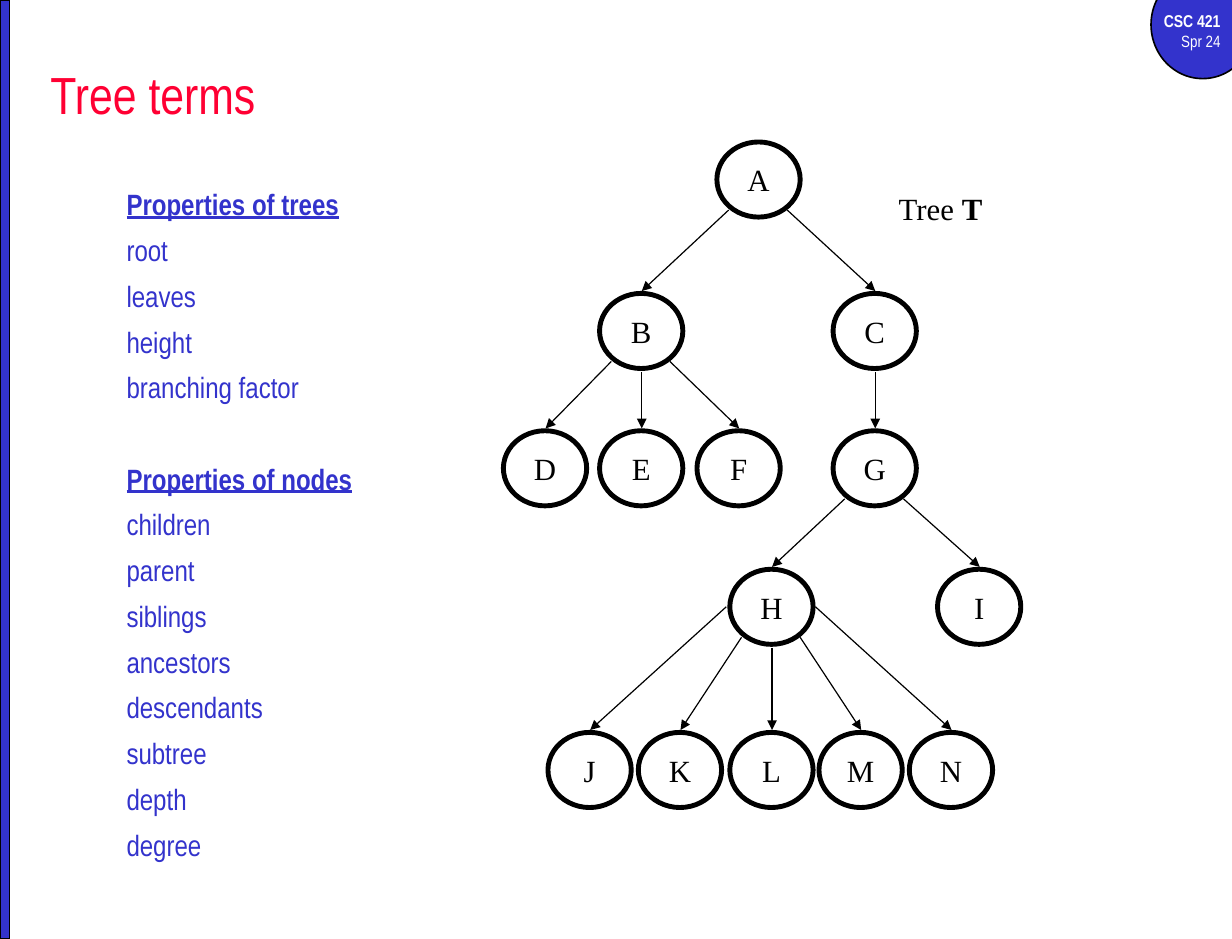
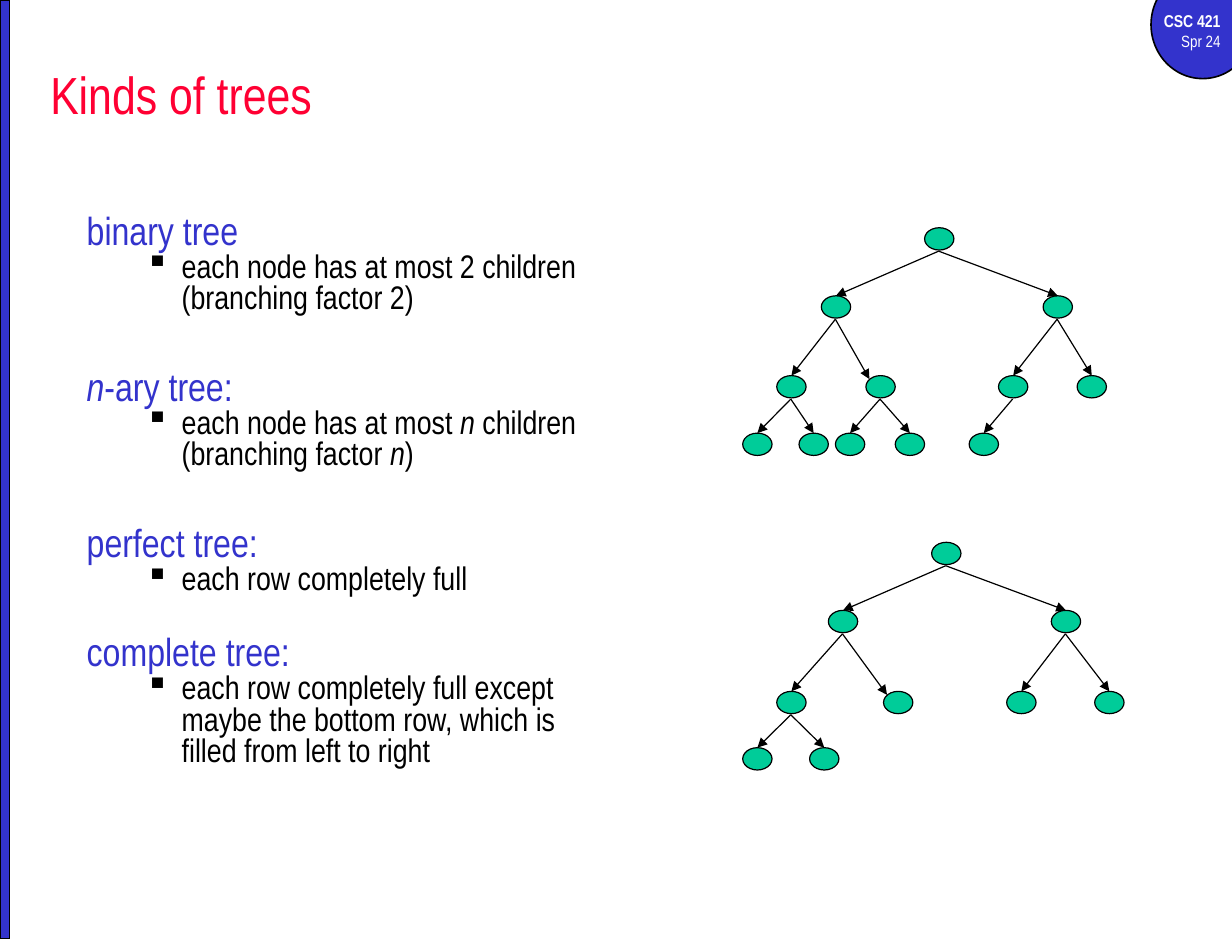
"""Build two slides about tree terms and kinds of trees."""
from dataclasses import dataclass

import pptx
import pptx.dml.color
import pptx.enum.shapes
import pptx.enum.text
import pptx.oxml
import pptx.oxml.ns
import pptx.util
from pptx.shapes.autoshape import Shape
from pptx.slide import Slide
from pptx.text.text import TextFrame

PX = 9144
BLUE, RED, GREEN, BLACK, WHITE = "3333CC", "FF0033", "00CC99", "000000", "FFFFFF"
SANS, SERIF = "Arial Narrow", "Times New Roman"
ALIGN = pptx.enum.text.PP_ALIGN
ANCHOR = pptx.enum.text.MSO_ANCHOR
PRESET = pptx.enum.shapes.MSO_SHAPE


@dataclass(frozen=True)
class Box:
    left: int
    top: int
    width: int
    height: int


@dataclass(frozen=True)
class NodeStyle:
    width: int
    height: int
    outline: float
    fill: str | None
    ports: dict[str, tuple[int, int]]
    glued: bool


@dataclass(frozen=True)
class Node:
    key: str
    left: int
    top: int
    parent: str = ""
    leave: str = "S"
    enter: str = "N"
    label: str = ""


@dataclass(frozen=True)
class TreeKind:
    name: str
    meaning: str
    gap: float = 0


LETTER_STYLE = NodeStyle(71, 64, 3, None, {
    "N": (36, -2), "W": (-3, 32), "SW": (10, 58),
    "S": (36, 67), "SE": (60, 58), "E": (73, 32)}, False)
DOT_STYLE = NodeStyle(25, 19, 0.75, GREEN, {"N": (12, 0), "NW": (3, 3), "S": (12, 20)}, True)

LEVELS = (121, 250, 367, 485, 624)
LETTER_NODES = [
    Node(letter, left, LEVELS[level], parent, leave, label=letter)
    for letter, left, level, parent, leave in (
        ("A", 611, 0, "", ""),
        ("B", 511, 1, "A", "SW"), ("C", 710, 1, "A", "SE"),
        ("D", 429, 2, "B", "SW"), ("E", 511, 2, "B", "S"), ("F", 594, 2, "B", "SE"),
        ("G", 710, 2, "C", "S"),
        ("H", 622, 3, "G", "SW"), ("I", 799, 3, "G", "SE"),
        ("J", 467, 4, "H", "W"), ("K", 544, 4, "H", "SW"), ("L", 622, 4, "H", "S"),
        ("M", 698, 4, "H", "SE"), ("N", 775, 4, "H", "E"))
]
PROPERTIES = {
    "Properties of trees": ("root", "leaves", "height", "branching factor"),
    "Properties of nodes": ("children", "parent", "siblings", "ancestors",
                            "descendants", "subtree", "depth", "degree"),
}
TREE_KINDS = (
    TreeKind("binary tree", "each node has at most 2 children (branching factor 2)"),
    TreeKind("*n*-ary tree:", "each node has at most *n* children (branching factor *n*)", 28.5),
    TreeKind("perfect tree:", "each row completely full", 28.5),
    TreeKind("complete tree:", "each row completely full except maybe the bottom row, "
             "which is filled from left to right", 19),
)
BINARY_TREE = ((194, 252, 320, 369),
               (788, 700, 889, 662, 738, 851, 918, 633, 681, 712, 763, 826))
COMPLETE_TREE = ((462, 520, 589, 637), (794, 706, 896, 662, 753, 858, 933, 633, 690))


def rgb(code: str) -> pptx.dml.color.RGBColor:
    """Turn a hex string into a colour."""
    return pptx.dml.color.RGBColor.from_string(code)


def write(frame: TextFrame, text: str, *, size: float, color: str = BLACK, font: str = SANS,
          bold: bool = False, underline: bool = False, emphasis: str = "italic",
          align: ALIGN = ALIGN.LEFT, line_spacing: float = 1.0, space_before: float = 0,
          bullet: str = "", indent: int = 0, hanging: int = 0) -> None:
    """Add one paragraph, with the parts between asterisks emphasised."""
    paragraph = frame.paragraphs[0] if not frame.text else frame.add_paragraph()
    paragraph.alignment = align
    paragraph.line_spacing = line_spacing
    paragraph.space_before = pptx.util.Pt(space_before)
    for position, part in enumerate(text.split("*")):
        if not part:
            continue
        run = paragraph.add_run()
        run.text = part
        run.font.name = font
        run.font.size = pptx.util.Pt(size)
        run.font.color.rgb = rgb(color)
        run.font.bold = bold
        run.font.underline = underline
        if position % 2:
            setattr(run.font, emphasis, True)
    if bullet:
        properties = paragraph._p.get_or_add_pPr()
        properties.set("marL", str(indent * PX))
        properties.set("indent", str(-hanging * PX))
        mark = pptx.oxml.parse_xml(
            f'<a:buChar {pptx.oxml.ns.nsdecls("a")} char="{bullet}"/>')
        properties.append(mark)


def add_frame(slide: Slide, box: Box, anchor: ANCHOR = ANCHOR.TOP, wrap: bool = True) -> TextFrame:
    """Add an empty text box and return its frame."""
    frame = slide.shapes.add_textbox(
        box.left * PX, box.top * PX, box.width * PX, box.height * PX).text_frame
    frame.word_wrap = wrap
    frame.vertical_anchor = anchor
    return frame


def add_figure(slide: Slide, preset: PRESET, box: Box, fill: str | None, outline: float) -> Shape:
    """Add a black-outlined preset shape."""
    figure = slide.shapes.add_shape(
        preset, box.left * PX, box.top * PX, box.width * PX, box.height * PX)
    figure.shadow.inherit = False
    if fill:
        figure.fill.solid()
        figure.fill.fore_color.rgb = rgb(fill)
    else:
        figure.fill.background()
    figure.line.color.rgb = rgb(BLACK)
    figure.line.width = pptx.util.Pt(outline)
    return figure


def add_branch(slide: Slide, parent: Node, child: Node, child_oval: Shape, style: NodeStyle) -> None:
    """Draw the arrow from a parent node to its child."""
    (leave_x, leave_y), (enter_x, enter_y) = style.ports[child.leave], style.ports[child.enter]
    arrow = slide.shapes.add_connector(
        pptx.enum.shapes.MSO_CONNECTOR.STRAIGHT,
        (parent.left + leave_x) * PX, (parent.top + leave_y) * PX,
        (child.left + enter_x) * PX, (child.top + enter_y) * PX)
    if style.glued and child.enter == "N":
        arrow.end_connect(child_oval, 0)
    arrow.line.color.rgb = rgb(BLACK)
    arrow.line.width = pptx.util.Pt(0.75)
    namespace = pptx.oxml.ns.nsdecls("a")
    arrow.line._get_or_add_ln().append(
        pptx.oxml.parse_xml(f'<a:tailEnd {namespace} type="triangle"/>'))
    arrow._element.spPr.append(pptx.oxml.parse_xml(f"<a:effectLst {namespace}/>"))


def draw_tree(slide: Slide, nodes: list[Node], style: NodeStyle) -> None:
    """Draw every node of a tree and the arrows between them."""
    by_key = {node.key: node for node in nodes}
    for node in nodes:
        oval = add_figure(slide, PRESET.OVAL,
                          Box(node.left, node.top, style.width, style.height),
                          style.fill, style.outline)
        if node.label:
            oval.text_frame.word_wrap = False
            oval.text_frame.vertical_anchor = ANCHOR.MIDDLE
            write(oval.text_frame, node.label, size=18.9, font=SERIF, align=ALIGN.CENTER)
        if node.parent:
            add_branch(slide, by_key[node.parent], node, oval, style)


def heap_nodes(row_tops: tuple[int, ...], lefts: tuple[int, ...]) -> list[Node]:
    """Number the nodes row by row, so that node i hangs from node i // 2."""
    return [Node(str(i), left, row_tops[i.bit_length() - 1], str(i // 2) if i > 1 else "",
                 enter="NW" if i == 5 else "N")
            for i, left in enumerate(lefts, start=1)]


def start_slide(deck: pptx.presentation.Presentation, title: str) -> Slide:
    """Add a slide with the course badge, the side band and a title."""
    slide = deck.slides.add_slide(deck.slide_layouts[6])
    add_figure(slide, PRESET.OVAL, Box(981, -25, 88, 92), BLUE, 1)
    course = add_frame(slide, Box(967, 4, 83, 46))
    write(course, "CSC 421", size=10.5, color=WHITE, bold=True, align=ALIGN.RIGHT)
    write(course, "Spr 24", size=10, color=WHITE, align=ALIGN.RIGHT)
    add_figure(slide, PRESET.RECTANGLE, Box(0, 0, 8, 800), BLUE, 1)
    write(add_frame(slide, Box(33, 42, 992, 75), ANCHOR.MIDDLE), title, size=32, color=RED)
    return slide


def build_terms(deck: pptx.presentation.Presentation) -> None:
    """Build the slide on tree terms."""
    slide = start_slide(deck, "Tree terms")
    draw_tree(slide, LETTER_NODES, LETTER_STYLE)
    caption = add_frame(slide, Box(756, 157, 92, 42), wrap=False)
    write(caption, "Tree *T*", size=18.9, font=SERIF, emphasis="bold")
    glossary = add_frame(slide, Box(98, 145, 532, 597))
    for index, (heading, terms) in enumerate(PROPERTIES.items()):
        write(glossary, heading, size=18, color=BLUE, bold=True, underline=True,
              line_spacing=1.3, space_before=28 * index)
        for term in terms:
            write(glossary, term, size=18, color=BLUE, line_spacing=1.3)


def build_kinds(deck: pptx.presentation.Presentation) -> None:
    """Build the slide on kinds of trees."""
    slide = start_slide(deck, "Kinds of trees")
    definitions = add_frame(slide, Box(64, 171, 461, 506))
    for kind in TREE_KINDS:
        write(definitions, kind.name, size=24, color=BLUE, space_before=kind.gap)
        write(definitions, kind.meaning, size=20, line_spacing=0.8,
              bullet="▪", indent=81, hanging=31)
    for row_tops, lefts in (BINARY_TREE, COMPLETE_TREE):
        draw_tree(slide, heap_nodes(row_tops, lefts), DOT_STYLE)


def main() -> None:
    """Build and save the deck."""
    deck = pptx.Presentation()
    deck.slide_width, deck.slide_height = 1050 * PX, 800 * PX
    build_terms(deck)
    build_kinds(deck)
    deck.save("out.pptx")


if __name__ == "__main__":
    main()
